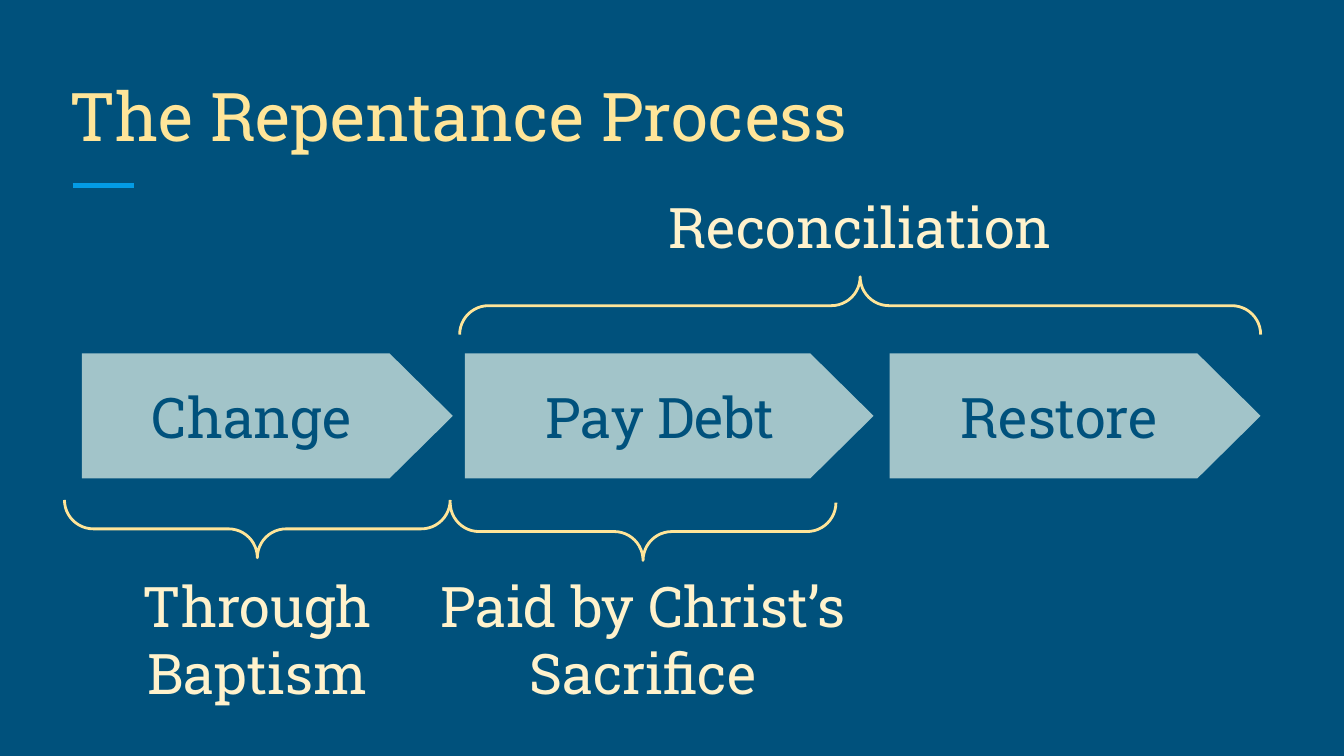
from dataclasses import dataclass

import pptx
import pptx.dml.color
import pptx.enum.shapes
import pptx.enum.text
import pptx.oxml.ns
import pptx.util
from lxml import etree

Inches = pptx.util.Inches
Pt = pptx.util.Pt
Align = pptx.enum.text.PP_ALIGN
Anchor = pptx.enum.text.MSO_ANCHOR
Shape = pptx.enum.shapes.MSO_SHAPE


@dataclass(frozen=True)
class Theme:
    background: str = "00517C"
    heading: str = "FFE599"
    label: str = "FFF2CC"
    accent: str = "039BE5"
    step: str = "A2C4C9"
    font: str = "Roboto Slab"
    title_size: int = 36
    body_size: int = 30


THEME = Theme()


def rgb(value):
    return pptx.dml.color.RGBColor.from_string(value)


def write(frame, wording, size, color, align, anchor):
    frame.word_wrap = True
    frame.vertical_anchor = anchor
    frame.margin_left = frame.margin_right = Inches(0.1)
    frame.margin_top = frame.margin_bottom = Inches(0.1)
    line = frame.paragraphs[0]
    line.text = wording
    line.alignment = align
    line.font.name = THEME.font
    line.font.size = Pt(size)
    line.font.color.rgb = rgb(color)


def add_label(slide, left, top, width, height, wording, size, color, align):
    label = slide.shapes.add_textbox(
        Inches(left), Inches(top), Inches(width), Inches(height))
    write(label.text_frame, wording, size, color, align, Anchor.BOTTOM)


def add_heading(slide, left, top, width, height):
    add_label(slide, left, top, width, height, "The Repentance Process",
              THEME.title_size, THEME.heading, Align.LEFT)
    rule_left, rule_top = left + 0.12, top + height + 0.13
    rule = slide.shapes.add_connector(
        pptx.enum.shapes.MSO_CONNECTOR.STRAIGHT,
        Inches(rule_left), Inches(rule_top),
        Inches(rule_left + 0.46), Inches(rule_top))
    rule.line.color.rgb = rgb(THEME.accent)
    rule.line.width = Pt(3)
    etree.SubElement(rule.element.spPr, pptx.oxml.ns.qn("a:effectLst"))


def add_process(slide, left, top, height, steps):
    process = slide.shapes.add_group_shape()
    for wording, offset, width in steps:
        step = process.shapes.add_shape(
            Shape.PENTAGON, Inches(left + offset), Inches(top),
            Inches(width), Inches(height))
        step.adjustments[0] = 0.506
        step.shadow.inherit = False
        step.fill.solid()
        step.fill.fore_color.rgb = rgb(THEME.step)
        step.line.fill.background()
        write(step.text_frame, wording, THEME.body_size, THEME.background,
              Align.CENTER, Anchor.MIDDLE)


def add_bracket(slide, left, top, width, height, rotation,
                wording, label_top, label_width):
    center_x, center_y = left + width / 2, top + height / 2
    brace = slide.shapes.add_shape(
        Shape.LEFT_BRACE,
        Inches(center_x - height / 2), Inches(center_y - width / 2),
        Inches(height), Inches(width))
    brace.rotation = rotation
    brace.adjustments[0] = 0.5
    brace.adjustments[1] = 0.5
    brace.shadow.inherit = False
    brace.fill.background()
    brace.line.color.rgb = rgb(THEME.heading)
    brace.line.width = Pt(1.5)
    add_label(slide, center_x - label_width / 2, label_top, label_width, 0.75,
              wording, THEME.body_size, THEME.label, Align.CENTER)


def main():
    deck = pptx.Presentation()
    deck.slide_width = Inches(10)
    deck.slide_height = deck.slide_width * 9 // 16
    slide = deck.slides.add_slide(deck.slide_layouts[6])
    slide.background.fill.solid()
    slide.background.fill.fore_color.rgb = rgb(THEME.background)

    add_heading(slide, 0.42, 0.5, 9.15, 0.75)
    add_process(slide, 0.61, 2.63, 0.93, [
        ("Change", 0, 2.76),
        (" Pay Debt", 2.85, 3.04),
        ("Restore", 6.01, 2.76),
    ])
    add_bracket(slide, 3.42, 2.06, 5.96, 0.43, 90,
                "Reconciliation", 1.28, 4.18)
    add_bracket(slide, 0.48, 3.72, 2.87, 0.43, 270,
                "Through Baptism", 4.6, 3.45)
    add_bracket(slide, 3.35, 3.74, 2.87, 0.43, 270,
                "Paid by Christ’s Sacrifice", 4.6, 3.45)
    deck.save("out.pptx")


if __name__ == "__main__":
    main()
